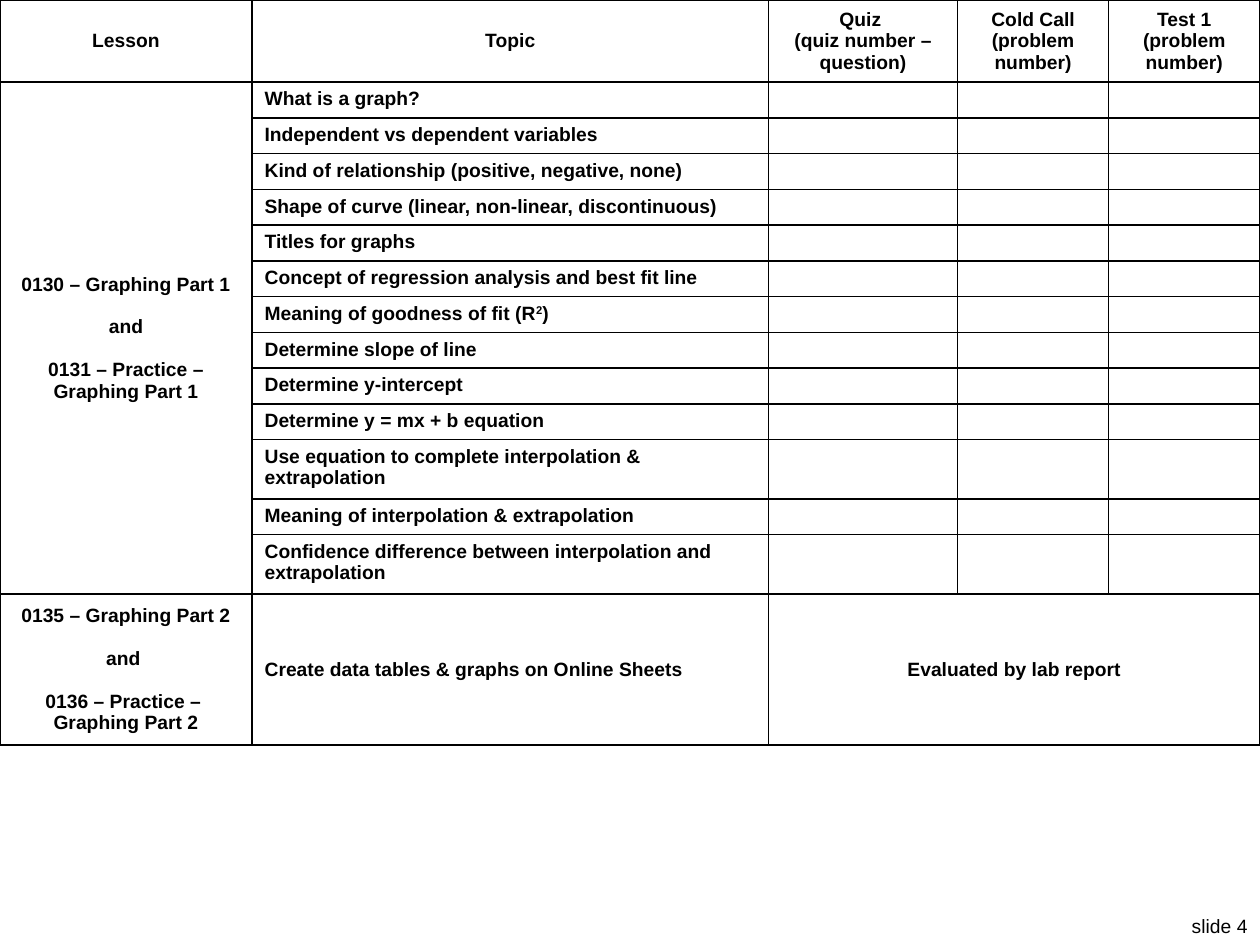
from lxml.etree import SubElement
from pptx import Presentation
from pptx.dml.color import RGBColor
from pptx.enum.text import MSO_ANCHOR as Anchor, MSO_AUTO_SIZE as AutoSize, PP_ALIGN as Align
from pptx.oxml.ns import qn
from pptx.util import Inches, Pt

BLACK = RGBColor(0x00, 0x00, 0x00)
WHITE = RGBColor(0xFF, 0xFF, 0xFF)
FONT = "Arial"
TEXT_SIZE = Pt(11)
LINE_GAP = Pt(12.2)

COLUMN_WIDTHS = [2, 4.1, 1.5, 1.2, 1.2]
HEADER_HEIGHT = Inches(0.65)
TOPIC_HEIGHT = Inches(3.12) // 11  # eleven one-line topics share this height
LONG_TOPIC_HEIGHT = Inches(0.47)
REPORT_HEIGHT = Inches(1.2)

HEADERS = [
    ["Lesson"],
    ["Topic"],
    ["Quiz ", "(quiz number – question)"],
    ["Cold Call (problem number)"],
    ["Test 1 (problem number)"],
]
PART_1 = ["0130 – Graphing Part 1", "and", "0131 – Practice –", "Graphing Part 1"]
PART_2 = ["0135 – Graphing Part 2", "and ", "0136 – Practice – ", "Graphing Part 2"]
# Each topic is a list of runs; every second run is superscript
TOPICS = [
    ["What is a graph?"],
    ["Independent vs dependent variables"],
    ["Kind of relationship (positive, negative, none)"],
    ["Shape of curve (linear, non-linear, discontinuous)"],
    ["Titles for graphs"],
    ["Concept of regression analysis and best fit line"],
    ["Meaning of goodness of fit (R", "2", ")"],
    ["Determine slope of line"],
    ["Determine y-intercept"],
    ["Determine y = mx + b equation"],
    ["Use equation to complete interpolation & extrapolation"],
    ["Meaning of interpolation & extrapolation"],
    ["Confidence difference between interpolation and extrapolation"],
]
LONG_TOPICS = (10, 12)


def add_run(paragraph, text, bold=True, superscript=False):
    run = paragraph.add_run()
    run.text = text
    font = run.font
    font.name, font.size, font.bold = FONT, TEXT_SIZE, bold
    font.color.rgb = BLACK
    if superscript:
        font._element.set("baseline", "30000")


def write_cell(cell, lines, align=Align.CENTER, anchor=Anchor.MIDDLE, gaps_before=()):
    """Write one paragraph per line; each line is a list of runs."""
    cell.vertical_anchor = anchor
    frame = cell.text_frame
    for index, runs in enumerate(lines):
        paragraph = frame.paragraphs[0] if index == 0 else frame.add_paragraph()
        paragraph.alignment = align
        if index in gaps_before:
            paragraph.space_before = LINE_GAP
        for position, text in enumerate(runs):
            add_run(paragraph, text, superscript=position % 2 == 1)


def write_lesson(cell, lines):
    write_cell(cell, [[line] for line in lines], gaps_before=(1, 2))


def style_cell(cell):
    """Give the cell thin black borders and a white fill."""
    properties = cell._tc.get_or_add_tcPr()
    for side in ("a:lnL", "a:lnR", "a:lnT", "a:lnB"):
        line = SubElement(properties, qn(side), w=str(Pt(1)))
        fill = SubElement(line, qn("a:solidFill"))
        SubElement(fill, qn("a:srgbClr"), val=str(BLACK))
    cell.fill.solid()
    cell.fill.fore_color.rgb = WHITE


def shrink_empty_cell(cell):
    """Keep an empty cell from stretching its row."""
    paragraph = cell.text_frame.paragraphs[0]
    if not paragraph.runs:
        SubElement(paragraph._p, qn("a:endParaRPr"), sz=str(int(TEXT_SIZE.pt * 100)))


def add_lesson_table(slide):
    heights = [HEADER_HEIGHT]
    heights += [LONG_TOPIC_HEIGHT if index in LONG_TOPICS else TOPIC_HEIGHT
                for index in range(len(TOPICS))]
    heights.append(REPORT_HEIGHT)
    last = len(heights) - 1

    table = slide.shapes.add_table(len(heights), len(COLUMN_WIDTHS), 0, 0,
                                   Inches(10), sum(heights)).table
    table.first_row = table.horz_banding = False
    for column, width in zip(table.columns, COLUMN_WIDTHS):
        column.width = Inches(width)
    for row, height in zip(table.rows, heights):
        row.height = height
    for cell in table.iter_cells():
        style_cell(cell)

    # Header row
    for column, lines in enumerate(HEADERS):
        write_cell(table.cell(0, column), [[line] for line in lines])

    # Part 1: one lesson cell beside all its topics
    table.cell(1, 0).merge(table.cell(last - 1, 0))
    write_lesson(table.cell(1, 0), PART_1)
    for row, runs in enumerate(TOPICS, start=1):
        write_cell(table.cell(row, 1), [runs], Align.LEFT, Anchor.TOP)

    # Part 2: a single topic, evaluated across the last three columns
    write_lesson(table.cell(last, 0), PART_2)
    write_cell(table.cell(last, 1),
               [["Create data tables & graphs on Online Sheets"]], Align.LEFT)
    table.cell(last, 2).merge(table.cell(last, 4))
    write_cell(table.cell(last, 2), [["Evaluated by lab report"]])

    for cell in table.iter_cells():
        shrink_empty_cell(cell)


def add_slide_label(slide, text):
    box = slide.shapes.add_textbox(Inches(9.25), Inches(7.21), Inches(0.75), Inches(0.29))
    frame = box.text_frame
    frame.word_wrap = False
    frame.auto_size = AutoSize.SHAPE_TO_FIT_TEXT
    paragraph = frame.paragraphs[0]
    paragraph.alignment = Align.RIGHT
    add_run(paragraph, text, bold=False)


def main():
    presentation = Presentation()
    presentation.slide_width, presentation.slide_height = Inches(10), Inches(7.5)
    slide = presentation.slides.add_slide(presentation.slide_layouts[6])
    add_slide_label(slide, "slide 4")
    add_lesson_table(slide)
    presentation.save("out.pptx")


if __name__ == "__main__":
    main()
